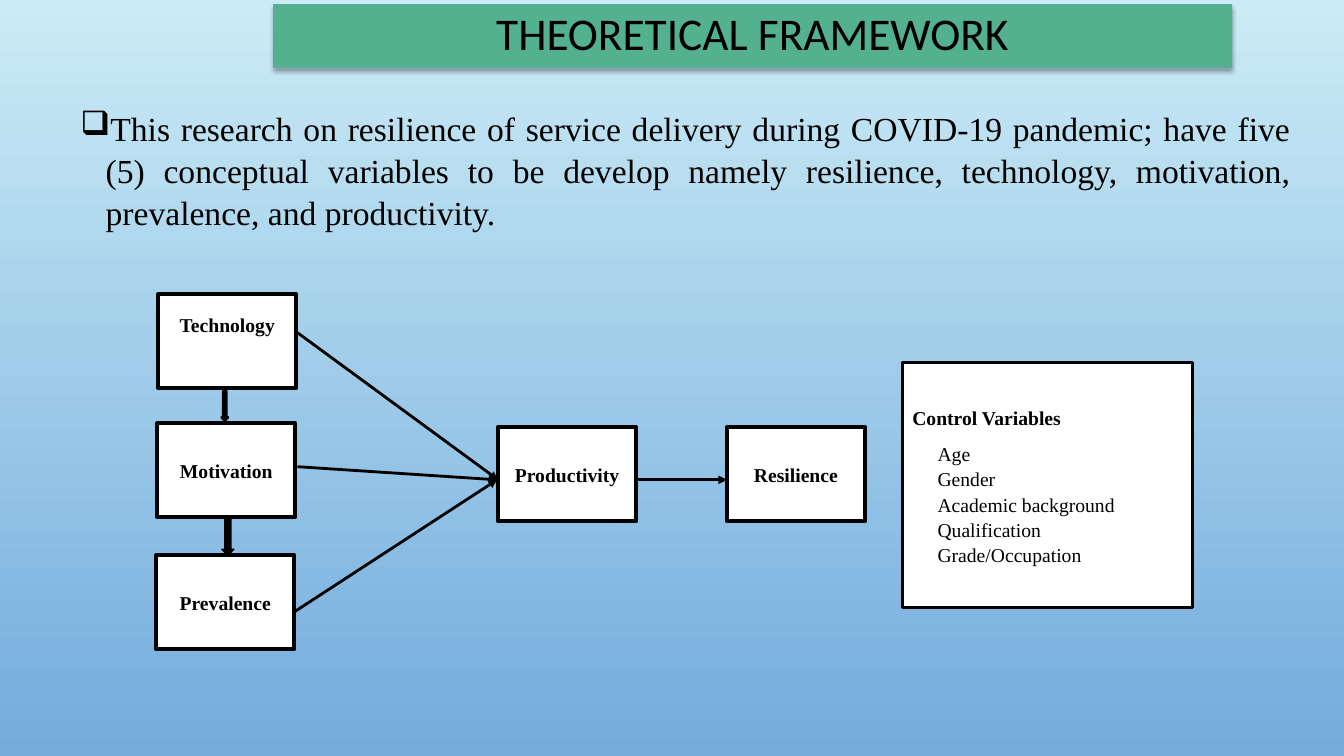
from dataclasses import dataclass

import lxml.etree
import pptx
import pptx.dml.color
import pptx.enum.shapes
import pptx.enum.text
import pptx.oxml
import pptx.oxml.ns
import pptx.util

Inches = pptx.util.Inches
Pt = pptx.util.Pt
RGBColor = pptx.dml.color.RGBColor
SHAPE = pptx.enum.shapes.MSO_SHAPE
ALIGN = pptx.enum.text.PP_ALIGN
ANCHOR = pptx.enum.text.MSO_ANCHOR
qn = pptx.oxml.ns.qn

BLACK = RGBColor(0x00, 0x00, 0x00)
WHITE = RGBColor(0xFF, 0xFF, 0xFF)
GREEN = RGBColor(0x53, 0xB1, 0x8F)
SKY_TOP = RGBColor(0xCB, 0xEC, 0xF5)
SKY_BOTTOM = RGBColor(0x73, 0xAB, 0xDD)
SERIF = "Times New Roman"
BOX_W, BOX_H = 1.37, 0.93
BODY = (
    "This research on resilience of service delivery during COVID-19 pandemic; "
    "have five (5) conceptual variables to be develop namely resilience, "
    "technology, motivation, prevalence, and productivity."
)
CONTROLS = ["Age", "Gender", "Academic background", "Qualification", "Grade/Occupation"]
SHADOW = (
    '<a:effectLst xmlns:a="http://schemas.openxmlformats.org/drawingml/2006/main">'
    '<a:outerShdw blurRad="44450" dist="27940" dir="5400000" rotWithShape="0">'
    '<a:srgbClr val="000000"><a:alpha val="32000"/></a:srgbClr>'
    "</a:outerShdw></a:effectLst>"
)


@dataclass
class Variable:
    name: str
    left: float
    top: float
    bottom_inset: float = 0.05


@dataclass
class DownArrow:
    left: float
    top: float
    width: float
    height: float
    line: float


@dataclass
class Link:
    x1: float
    y1: float
    x2: float
    y2: float


VARIABLES = [
    Variable("Technology", 1.57, 2.92, 0.39),
    Variable("Motivation", 1.56, 4.2),
    Variable("Prevalence", 1.55, 5.51),
    Variable("Productivity", 4.94, 4.24),
    Variable("Resilience", 7.21, 4.24),
]
DOWN_ARROWS = [
    DownArrow(2.2, 3.88, 0.06, 0.29, 2),
    DownArrow(2.2, 5.13, 0.12, 0.38, 1),
]
LINKS = [
    Link(2.95, 3.3, 4.94, 4.76),
    Link(2.92, 6.07, 4.93, 4.76),
    Link(2.95, 4.63, 4.93, 4.76),
    Link(6.31, 4.76, 7.21, 4.76),
]


def style_paragraph(p, size: float, font: str = SERIF, bold: bool = False,
                    align=ALIGN.LEFT, spacing: float = 1.07, after: float = 0) -> None:
    p.alignment = align
    p.line_spacing = spacing
    p.space_before = Pt(0)
    p.space_after = Pt(after)
    for r in p.runs:
        r.font.name = font
        r.font.size = Pt(size)
        r.font.bold = bold
        r.font.color.rgb = BLACK


def add_box(slide, kind, left: float, top: float, width: float, height: float,
            fill: RGBColor, line: float):
    sp = slide.shapes.add_shape(kind, Inches(left), Inches(top), Inches(width), Inches(height))
    sp.shadow.inherit = False
    sp.fill.solid()
    sp.fill.fore_color.rgb = fill
    sp.line.color.rgb = BLACK
    sp.line.width = Pt(line)
    sp.text_frame.word_wrap = True
    sp.text_frame.vertical_anchor = ANCHOR.MIDDLE
    return sp


def add_variable(slide, v: Variable) -> None:
    tf = add_box(slide, SHAPE.RECTANGLE, v.left, v.top, BOX_W, BOX_H, WHITE, 3).text_frame
    tf.margin_bottom = Inches(v.bottom_inset)
    tf.text = v.name
    style_paragraph(tf.paragraphs[0], 14, bold=True, align=ALIGN.CENTER, after=8)


def add_link(slide, link: Link) -> None:
    cn = slide.shapes.add_connector(
        pptx.enum.shapes.MSO_CONNECTOR.STRAIGHT,
        Inches(link.x1), Inches(link.y1), Inches(link.x2), Inches(link.y2))
    cn.line.color.rgb = BLACK
    cn.line.width = Pt(2)
    lxml.etree.SubElement(cn.line._get_or_add_ln(), qn("a:tailEnd"), type="triangle")
    lxml.etree.SubElement(cn._element.spPr, qn("a:effectLst"))


def add_title(slide) -> None:
    sp = slide.shapes.title
    sp.left, sp.top, sp.width, sp.height = Inches(2.71), Inches(0.04), Inches(9.51), Inches(0.63)
    sp.fill.solid()
    sp.fill.fore_color.rgb = GREEN
    sp._element.spPr.append(pptx.oxml.parse_xml(SHADOW))
    tf = sp.text_frame
    tf.text = "THEORETICAL FRAMEWORK"
    tf.auto_size = pptx.enum.text.MSO_AUTO_SIZE.NONE
    tf.vertical_anchor = ANCHOR.MIDDLE
    style_paragraph(tf.paragraphs[0], 32.4, "Calibri", align=ALIGN.CENTER, spacing=0.9)


def add_body(slide) -> None:
    tf = slide.shapes.add_textbox(Inches(0.7), Inches(1), Inches(12.2), Inches(5.35)).text_frame
    tf.word_wrap = True
    tf.text = BODY
    p = tf.paragraphs[0]
    pPr = p._p.get_or_add_pPr()
    pPr.set("marL", str(Inches(0.25)))
    pPr.set("indent", str(Inches(-0.25)))
    lxml.etree.SubElement(pPr, qn("a:buChar"), char="❑")
    style_paragraph(p, 24, align=ALIGN.JUSTIFY, spacing=1.05)


def add_controls(slide) -> None:
    tf = add_box(slide, SHAPE.RECTANGLE, 8.95, 3.6, 2.88, 2.43, WHITE, 2).text_frame
    tf.text = "Control Variables"
    style_paragraph(tf.paragraphs[0], 14, bold=True, after=8)
    for name in CONTROLS:
        p = tf.add_paragraph()
        p.text = name
        p._p.get_or_add_pPr().set("marL", str(Inches(0.25)))
        style_paragraph(p, 14, after=8 if name == CONTROLS[-1] else 0)


def main() -> None:
    prs = pptx.Presentation()
    prs.slide_width, prs.slide_height = Inches(13.33), Inches(7.5)
    slide = prs.slides.add_slide(prs.slide_layouts[5])
    fill = slide.background.fill
    fill.gradient()
    fill.gradient_angle = 270
    for stop, color in zip(fill.gradient_stops, (SKY_TOP, SKY_BOTTOM)):
        stop.color.rgb = color

    add_title(slide)
    add_body(slide)
    for v in VARIABLES:
        add_variable(slide, v)
    for a in DOWN_ARROWS:
        add_box(slide, SHAPE.DOWN_ARROW, a.left, a.top, a.width, a.height, BLACK, a.line)
    for link in LINKS:
        add_link(slide, link)
    add_controls(slide)
    prs.save("out.pptx")


if __name__ == "__main__":
    main()
